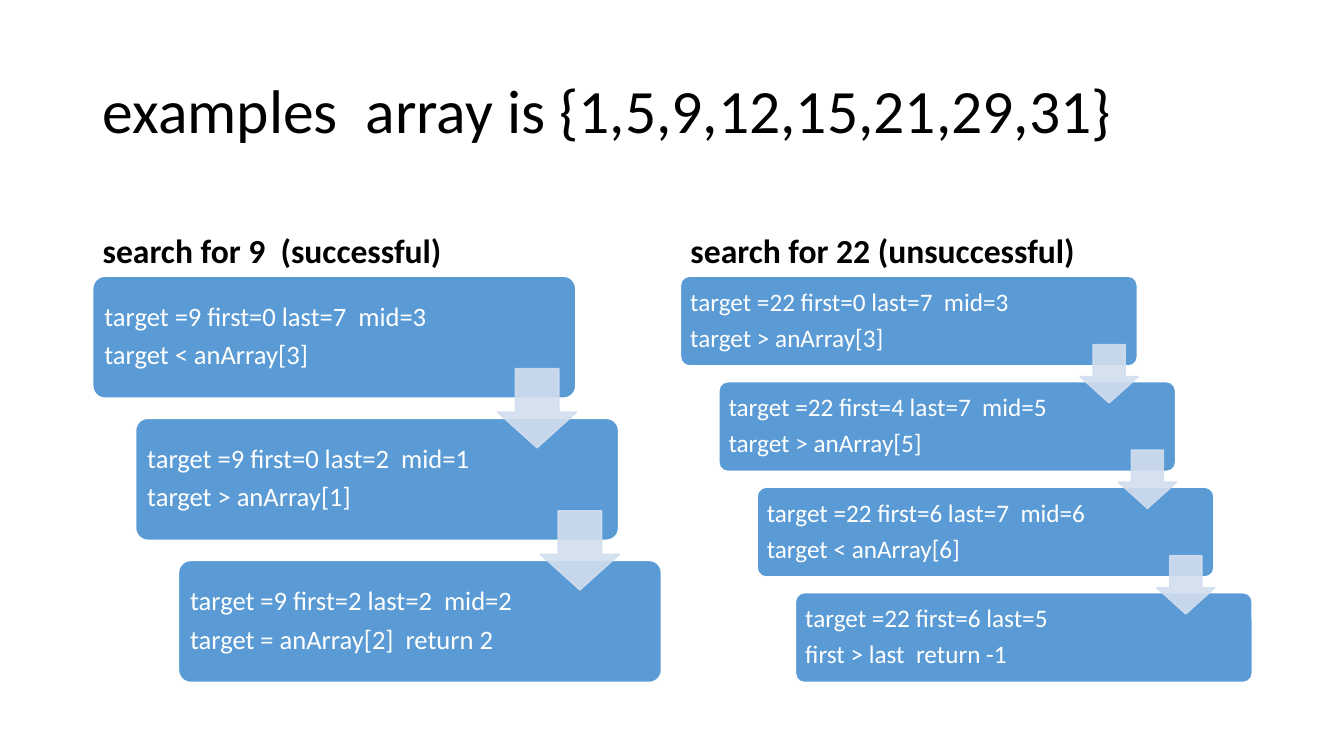
from lxml import etree
from pptx import Presentation
from pptx.dml.color import RGBColor
from pptx.enum.shapes import MSO_SHAPE
from pptx.enum.text import MSO_ANCHOR, PP_ALIGN
from pptx.oxml.ns import qn
from pptx.util import Inches, Pt

ROUNDED = MSO_SHAPE.ROUNDED_RECTANGLE
DOWN_ARROW = MSO_SHAPE.DOWN_ARROW
MIDDLE, BOTTOM = MSO_ANCHOR.MIDDLE, MSO_ANCHOR.BOTTOM
LEFT = PP_ALIGN.LEFT

FONT = "Calibri"
BLACK, WHITE, BLUE, PALE_BLUE = "000000", "FFFFFF", "5B9BD5", "D2DEEF"
STAIR_TOP, STAIR_HEIGHT = 2.74, 4.03

SUCCESSFUL_STEPS = [
    ("target =9 first=0 last=7  mid=3", "target < anArray[3]"),
    ("target =9 first=0 last=2  mid=1", "target > anArray[1]"),
    ("target =9 first=2 last=2  mid=2", "target = anArray[2]  return 2"),
]
UNSUCCESSFUL_STEPS = [
    ("target =22 first=0 last=7  mid=3", "target > anArray[3]"),
    ("target =22 first=4 last=7  mid=5", "target > anArray[5]"),
    ("target =22 first=6 last=7  mid=6", "target < anArray[6]"),
    ("target =22 first=6 last=5", "first > last  return -1"),
]


def color(value):
    return RGBColor.from_string(value)


def write_line(para, text, size, ink, bold=False, space_after=0):
    para.alignment = LEFT
    para.line_spacing = 0.9
    para.space_after = Pt(space_after)
    span = para.add_run()
    span.text = text
    span.font.name = FONT
    span.font.size = Pt(size)
    span.font.bold = bold
    span.font.color.rgb = color(ink)


def add_text(page, text, left, top, width, height, size, anchor, bold=False):
    box = page.shapes.add_textbox(Inches(left), Inches(top), Inches(width), Inches(height))
    frame = box.text_frame
    frame.word_wrap = True
    frame.vertical_anchor = anchor
    write_line(frame.paragraphs[0], text, size, BLACK, bold)


def add_filled_shape(group, kind, left, top, width, height, fill, line, adjustments):
    shape = group.shapes.add_shape(kind, Inches(left), Inches(top), Inches(width), Inches(height))
    shape.shadow.inherit = False
    shape.fill.solid()
    shape.fill.fore_color.rgb = color(fill)
    shape.line.color.rgb = color(line)
    shape.line.width = Pt(1)
    for index, value in enumerate(adjustments):
        shape.adjustments[index] = value
    return shape


def add_step(group, lines, left, top, width, height, size, inset):
    step = add_filled_shape(group, ROUNDED, left, top, width, height, BLUE, WHITE, [0.1])
    frame = step.text_frame
    frame.word_wrap = True
    frame.vertical_anchor = MIDDLE
    frame.margin_left = frame.margin_right = Inches(inset)
    frame.margin_top = frame.margin_bottom = Inches(inset)
    for index, text in enumerate(lines):
        para = frame.add_paragraph() if index else frame.paragraphs[0]
        write_line(para, text, size, WHITE, space_after=0.35 * size)


def add_arrow(group, left, top, side):
    """Draw a slightly transparent down arrow in a square of the given side."""
    arrow = add_filled_shape(group, DOWN_ARROW, left, top, side, side,
                             PALE_BLUE, PALE_BLUE, [0.55, 0.45])
    for tone in arrow._element.spPr.iter(qn("a:srgbClr")):
        etree.SubElement(tone, qn("a:alpha"), val="90000")


def add_staircase(page, steps, left, total_width, width, height, size, inset):
    """Spread the steps diagonally over the area, with an arrow across each gap."""
    group = page.shapes.add_group_shape()
    shift = (total_width - width) / (len(steps) - 1)
    drop = (STAIR_HEIGHT - height) / (len(steps) - 1)
    for index, lines in enumerate(steps):
        add_step(group, lines, left + index * shift, STAIR_TOP + index * drop,
                 width, height, size, inset)
    side = 0.65 * height
    for index in range(len(steps) - 1):
        gap_middle = STAIR_TOP + index * drop + (height + drop) / 2
        add_arrow(group, left + index * shift + width + 0.01 - side,
                  gap_middle - side / 2, side)


def main():
    deck = Presentation()
    deck.slide_width, deck.slide_height = Inches(13.33), Inches(7.5)
    page = deck.slides.add_slide(deck.slide_layouts[6])

    add_text(page, "examples  array is {1,5,9,12,15,21,29,31}",
             0.92, 0.4, 11.5, 1.45, 44, MIDDLE)
    add_text(page, "search for 9  (successful)", 0.92, 1.84, 5.64, 0.9, 24, BOTTOM, bold=True)
    add_staircase(page, SUCCESSFUL_STEPS, 0.92, 5.64, 4.79, 1.21, size=19, inset=0.08)
    add_text(page, "search for 22 (unsuccessful)", 6.75, 1.84, 5.67, 0.9, 24, BOTTOM, bold=True)
    add_staircase(page, UNSUCCESSFUL_STEPS, 6.75, 5.67, 4.53, 0.89, size=18, inset=0.07)

    deck.save("out.pptx")


if __name__ == "__main__":
    main()
